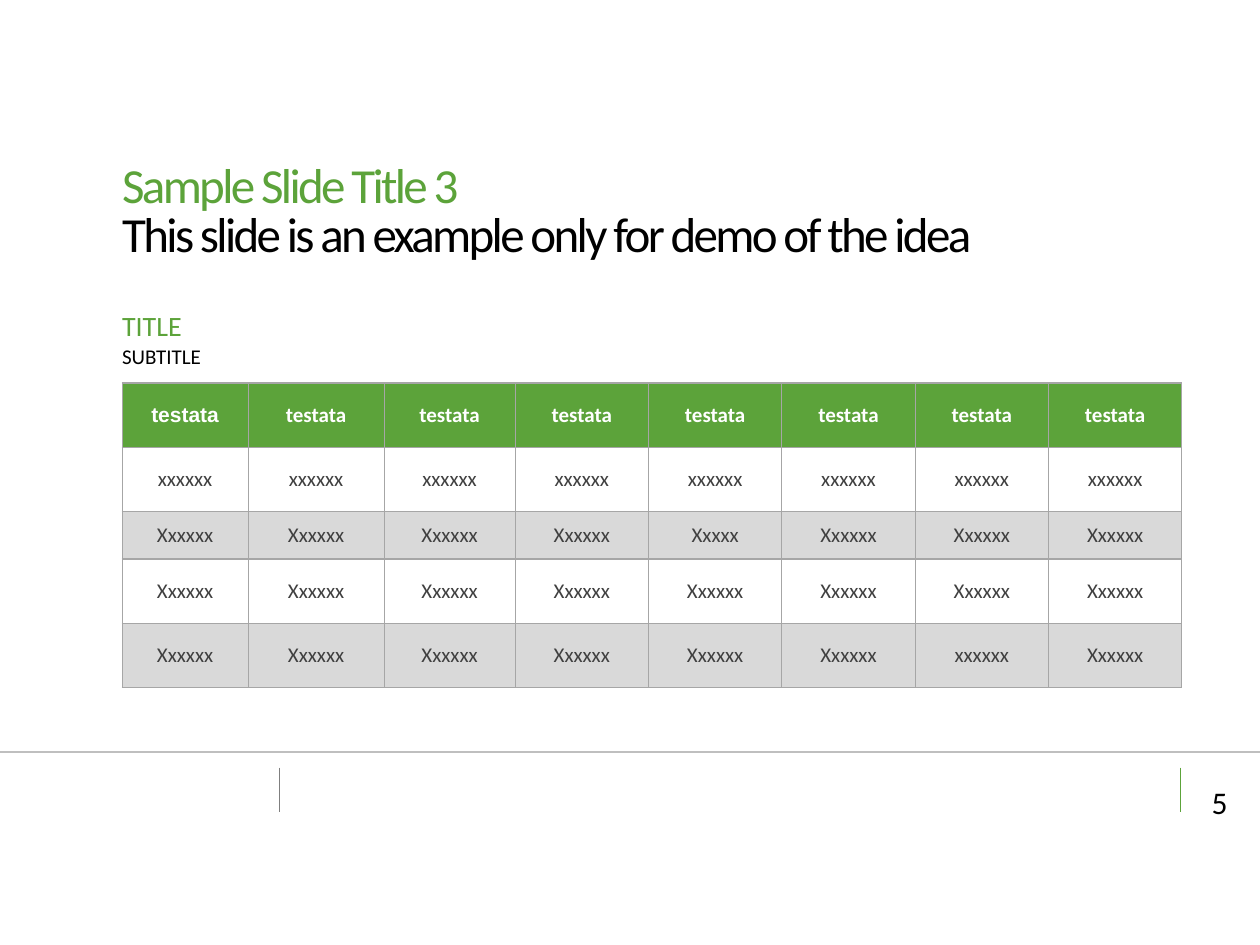
from dataclasses import dataclass

from lxml import etree
from pptx import Presentation
from pptx.dml.color import RGBColor
from pptx.enum.shapes import MSO_CONNECTOR
from pptx.enum.text import MSO_ANCHOR, PP_ALIGN
from pptx.oxml.ns import qn
from pptx.util import Pt

LINE = MSO_CONNECTOR.STRAIGHT
TOP, MIDDLE = MSO_ANCHOR.TOP, MSO_ANCHOR.MIDDLE
LEFT, CENTER = PP_ALIGN.LEFT, PP_ALIGN.CENTER

GREEN, BLACK, WHITE = "5CA33A", "000000", "FFFFFF"
TEXT, BAND, EDGE = "404040", "D9D9D9", "A6A6A6"
RULE, TICK = "BFBFBF", "7F7F7F"
MARGIN, RIGHT = 69.8, 674.6


@dataclass
class Run:
    text: str
    size: float
    color: str
    font: str = "Calibri"
    bold: bool = False
    track: float = 0


@dataclass
class Rule:
    x1: float
    y1: float
    x2: float
    y2: float
    color: str
    width: float = 1


def rgb(code: str) -> RGBColor:
    return RGBColor.from_string(code)


def add_runs(para, runs: list[Run], align=LEFT) -> None:
    """Write the runs into one paragraph, with a line break between them."""
    para.alignment = align
    for i, item in enumerate(runs):
        if i:
            para.add_line_break()
        run = para.add_run()
        run.text = item.text
        font = run.font
        font.name, font.size, font.bold = item.font, Pt(item.size), item.bold
        font.color.rgb = rgb(item.color)
        if item.track:
            run._r.get_or_add_rPr().set("spc", str(round(item.track * 100)))


def set_text(shape, box: tuple, runs: list[Run], space: float, anchor=TOP) -> None:
    """Place a text shape without insets and fill it."""
    shape.left, shape.top, shape.width, shape.height = map(Pt, box)
    frame = shape.text_frame
    frame.word_wrap = True
    frame.vertical_anchor = anchor
    frame.margin_left = frame.margin_right = 0
    frame.margin_top = frame.margin_bottom = 0
    para = frame.paragraphs[0]
    para.line_spacing = Pt(space)
    add_runs(para, runs)


def add_rule(slide, rule: Rule) -> None:
    ends = map(Pt, (rule.x1, rule.y1, rule.x2, rule.y2))
    line = slide.shapes.add_connector(LINE, *ends)
    line.line.color.rgb = rgb(rule.color)
    line.line.width = Pt(rule.width)
    etree.SubElement(line._element.spPr, qn("a:effectLst"))


def set_edges(cell, color: str, width: float) -> None:
    props = cell._tc.get_or_add_tcPr()
    for i, side in enumerate(("lnL", "lnR", "lnT", "lnB")):
        edge = etree.Element(qn(f"a:{side}"), w=str(Pt(width)))
        fill = etree.SubElement(edge, qn("a:solidFill"))
        etree.SubElement(fill, qn("a:srgbClr"), val=color)
        props.insert(i, edge)


def set_cell(cell, run: Run, fill: str | None) -> None:
    cell.vertical_anchor = MIDDLE
    if fill:
        cell.fill.solid()
        cell.fill.fore_color.rgb = rgb(fill)
    else:
        cell.fill.background()
    set_edges(cell, EDGE, 0.75)
    add_runs(cell.text_frame.paragraphs[0], [run], CENTER)


def add_grid(slide, x: float, y: float, cols: list, rows: list, data: list) -> None:
    """Draw the table: green header, then plain and grey rows in turn."""
    shape = slide.shapes.add_table(
        len(rows), len(cols), Pt(x), Pt(y), Pt(sum(cols)), Pt(sum(rows)))
    table = shape.table
    table.first_row = table.horz_banding = False
    for col, width in zip(table.columns, cols):
        col.width = Pt(width)
    for r, (row, high) in enumerate(zip(table.rows, rows)):
        row.height = Pt(high)
        head = r == 0
        fill = GREEN if head else (None if r % 2 else BAND)
        for c, (cell, word) in enumerate(zip(row.cells, data[r])):
            font = "Arial" if head and c == 0 else "Calibri"
            run = Run(word, 12, WHITE if head else TEXT, font, head)
            set_cell(cell, run, fill)


def main() -> None:
    deck = Presentation()
    deck.slide_width, deck.slide_height = Pt(720), Pt(540)
    slide = deck.slides.add_slide(deck.slide_layouts[5])

    # Title
    set_text(slide.shapes.title, (MARGIN, 87.8, 524.9, 67.7), [
        Run("Sample Slide Title 3", 28, GREEN, track=-1.5),
        Run("This slide is an example only for demo of the idea", 28, BLACK,
            track=-1.5),
    ], 28, MIDDLE)

    # Table caption
    label = slide.shapes.add_textbox(0, 0, 0, 0)
    set_text(label, (MARGIN, 180.7, 605.5, 36.7), [
        Run("TITLE", 16, GREEN),
        Run("SUBTITLE", 12, BLACK),
    ], 15)

    # Table
    cols = [72, 77.7, 74.9] + [76.2] * 5
    rows = [36.6, 36.6, 27.4, 36.6, 36.6]
    count = len(cols)
    data = [["testata"] * count, ["xxxxxx"] * count]
    data += [["Xxxxxx"] * count for _ in range(3)]
    data[2][4] = "Xxxxx"
    data[4][6] = "xxxxxx"
    add_grid(slide, MARGIN, 218.9, cols, rows, data)

    # Footer rules
    for rule in (
        Rule(0, 429.8, 720, 429.8, RULE),
        Rule(159.8, 438.6, 159.8, 463.8, TICK, 0.5),
        Rule(RIGHT, 438.6, RIGHT, 463.8, GREEN),
    ):
        add_rule(slide, rule)

    # Page number
    page = slide.shapes.add_textbox(Pt(RIGHT), Pt(444.2), Pt(44.6), Pt(16.6))
    page.text_frame.word_wrap = True
    add_runs(page.text_frame.paragraphs[0], [Run("5", 18, BLACK)], CENTER)

    deck.save("out.pptx")


if __name__ == "__main__":
    main()
